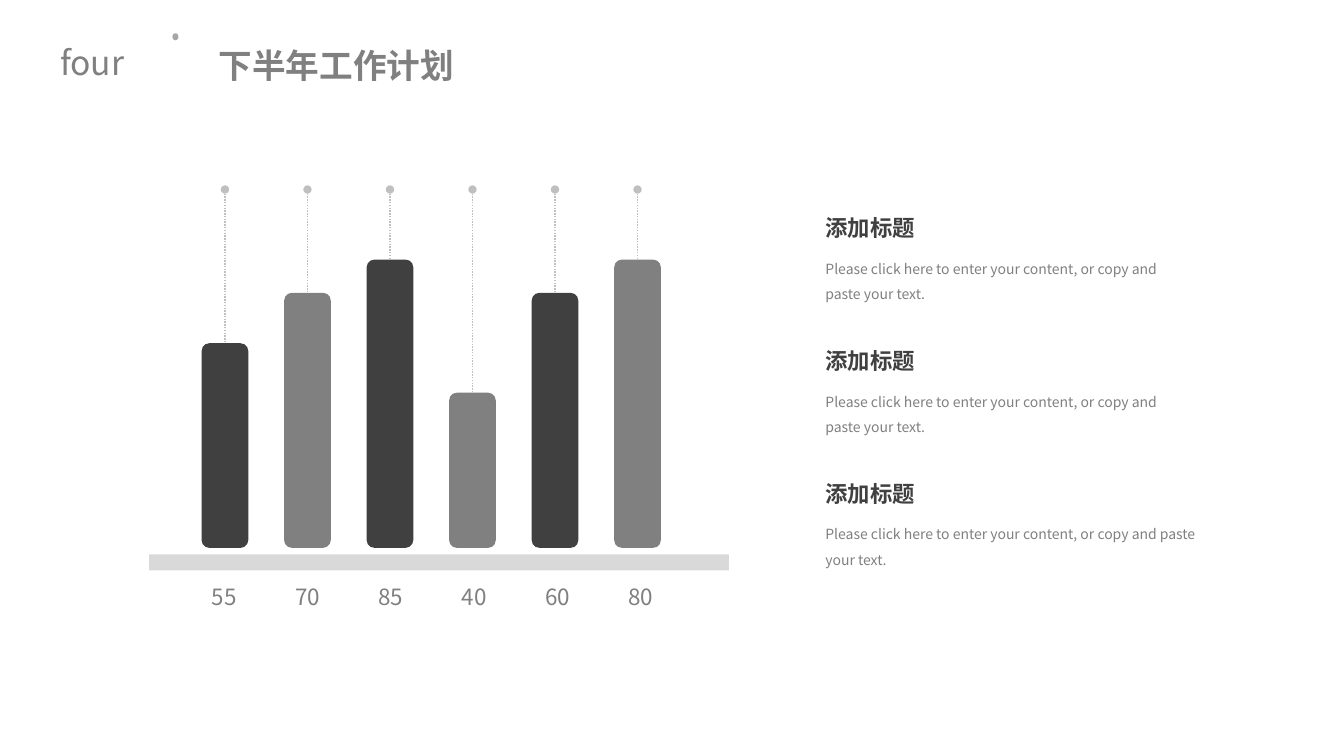
from lxml.etree import SubElement
from pptx import Presentation
from pptx.dml.color import RGBColor
from pptx.enum.dml import MSO_LINE
from pptx.enum.shapes import MSO_CONNECTOR, MSO_SHAPE
from pptx.enum.text import MSO_ANCHOR, PP_ALIGN
from pptx.oxml.ns import qn
from pptx.util import Inches, Pt

FONT = "Noto Sans CJK SC"
DARK, GRAY, MID, SILVER, PALE = "404040", "808080", "A6A6A6", "BFBFBF", "D9D9D9"
SLIDE_W, SLIDE_H = Inches(13.33), Inches(7.5)

# Value and bar height in grid rows
BARS = [(55, 27.07), (70, 33.73), (85, 38.13), (40, 20.53), (60, 33.73), (80, 38.13)]
BODY = "Please click here to enter your content, or copy and paste your text."
# Heading, body and body width in grid columns
NOTES = [("添加标题", BODY, 28.9), ("添加标题", BODY, 28.35), ("添加标题", BODY, 29.7)]


def col(n):
    """Length of n columns, 100 to the slide's width."""
    return round(SLIDE_W * n / 100)


def row(n):
    """Length of n rows, 100 to the slide's height."""
    return round(SLIDE_H * n / 100)


def place(x, y, w, h):
    return col(x), row(y), col(w), row(h)


def rgb(value):
    return RGBColor.from_string(value)


def add_block(s, kind, box, color):
    sp = s.shapes.add_shape(kind, *place(*box))
    sp.shadow.inherit = False
    sp.fill.solid()
    sp.fill.fore_color.rgb = rgb(color)
    sp.line.fill.background()
    return sp


def add_text(s, box, text, size, color, bold=False, align=PP_ALIGN.LEFT,
             spacing=None, wrap=False, insets=None, anchor=MSO_ANCHOR.TOP):
    tf = s.shapes.add_textbox(*place(*box)).text_frame
    tf.word_wrap = wrap
    tf.vertical_anchor = anchor
    if insets:
        tf.margin_left, tf.margin_top, tf.margin_right, tf.margin_bottom = map(Inches, insets)
    p = tf.paragraphs[0]
    p.alignment = align
    p.line_spacing = spacing
    r = p.add_run()
    r.text = text
    r.font.size = Pt(size)
    r.font.bold = bold
    r.font.name = FONT
    r.font.color.rgb = rgb(color)
    SubElement(r.font._element, qn("a:ea"), typeface=FONT)


def add_dotted_line(s, x, bottom, top):
    """Dotted upright line with a round end at the top."""
    line = s.shapes.add_connector(MSO_CONNECTOR.STRAIGHT, col(x), row(bottom), col(x), row(top))
    line.line.color.rgb = rgb(SILVER)
    line.line.width = Pt(1)
    line.line.dash_style = MSO_LINE.ROUND_DOT
    SubElement(line.line._get_or_add_ln(), qn("a:tailEnd"), type="oval")
    SubElement(line._element.spPr, qn("a:effectLst"))
    return line


def add_header(s, x, y, w, h):
    add_block(s, MSO_SHAPE.OVAL, (x + 9.23, y, 0.45, 0.93), MID)
    add_text(s, (x, y + 0.53, 6.53, 6.67), "four", 24, GRAY, align=PP_ALIGN.CENTER)
    add_text(s, (x + 10.65, y, w - 10.65, h), "下半年工作计划", 24, GRAY, bold=True,
             align=PP_ALIGN.JUSTIFY, spacing=0.9, wrap=True,
             insets=(0.27, 0.17, 0.3, 0.17), anchor=MSO_ANCHOR.MIDDLE)


def add_bars(s, x, y, w, h):
    """Hanging bars on a shelf, with their values below."""
    bar_w, bar_pitch, label_w, label_pitch, label_h = 3.47, 6.14, 2.63, 6.2, 5.47
    floor = y + h - 9.4
    add_block(s, MSO_SHAPE.RECTANGLE, (x, floor + 0.87, w, 2.13), PALE)
    for i, (value, height) in enumerate(BARS):
        left = x + 3.9 + i * bar_pitch
        line = add_dotted_line(s, left + bar_w / 2, floor, y)
        bar = add_block(s, MSO_SHAPE.ROUNDED_RECTANGLE,
                        (left, floor - height, bar_w, height), GRAY if i % 2 else DARK)
        line.begin_connect(bar, 2)
        add_text(s, (x + 4.28 + i * label_pitch, y + h - label_h, label_w, label_h),
                 str(value), 16, GRAY, align=PP_ALIGN.CENTER, spacing=1.2,
                 insets=(0, 0, 0, 0))


def add_notes(s, x, y, h):
    pitch = h / len(NOTES)
    for i, (heading, body, width) in enumerate(NOTES):
        top = y + i * pitch
        add_text(s, (x, top, 8.25, 4.53), heading, 16, DARK, bold=True, spacing=0.9)
        add_text(s, (x, top + 4.6, width, 7.73), body, 10, GRAY, spacing=Pt(18), wrap=True)


def main():
    prs = Presentation()
    prs.slide_width, prs.slide_height = SLIDE_W, SLIDE_H
    s = prs.slides.add_slide(prs.slide_layouts[6])
    add_header(s, 3.6, 4.4, 46.88, 9.07)
    add_bars(s, 11.1, 25.07, 43.13, 56.8)
    add_notes(s, 60.68, 28.13, 52.6)
    prs.save("out.pptx")


if __name__ == "__main__":
    main()
